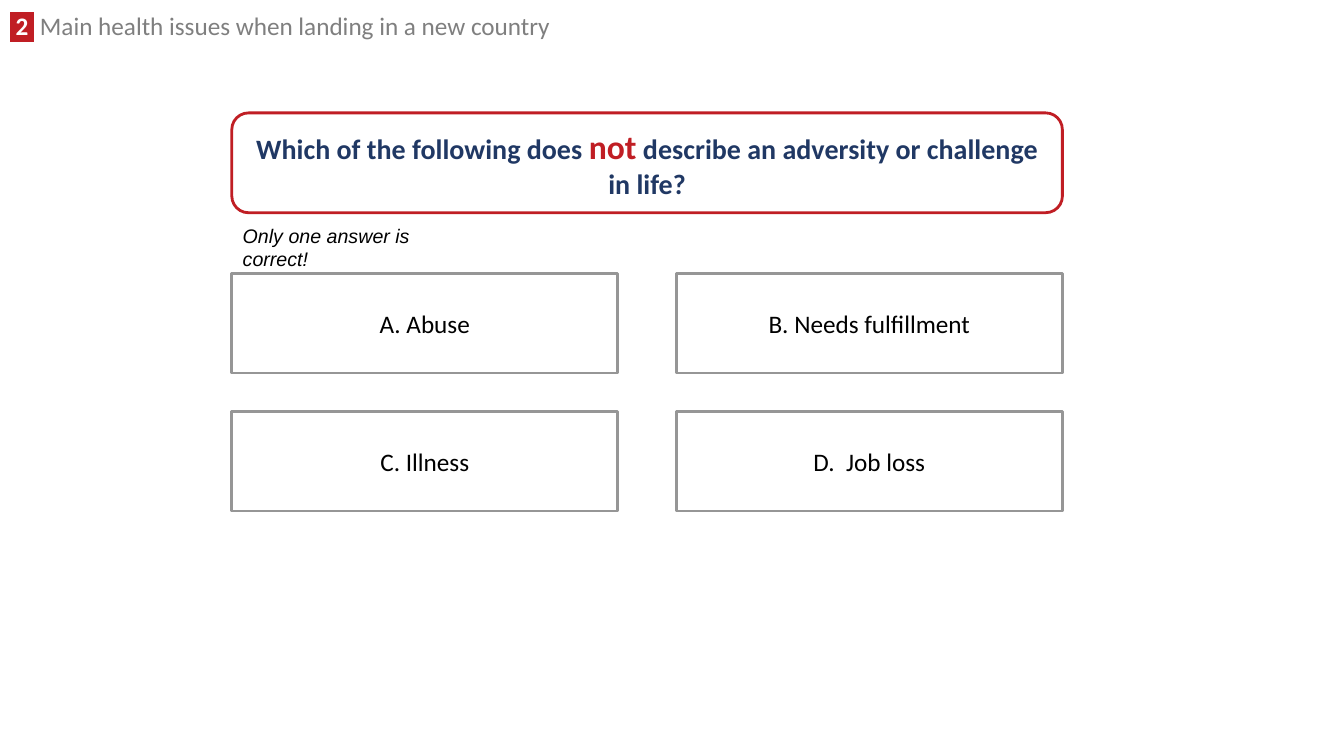
from dataclasses import dataclass

from lxml import etree
from pptx import Presentation
from pptx.dml.color import RGBColor
from pptx.enum import shapes, text
from pptx.oxml import ns
from pptx.util import Pt


@dataclass(frozen=True)
class Theme:
    red: str = "C01E24"
    navy: str = "203864"
    grey: str = "7F7F7F"
    border: str = "969696"
    black: str = "000000"
    white: str = "FFFFFF"
    body_font: str = "Calibri"
    note_font: str = "Arial"
    note_size: int = 14
    text_size: int = 18
    question_size: int = 20
    emphasis_size: int = 24
    line_width: int = 2


@dataclass(frozen=True)
class Box:
    left: float
    top: float
    width: float
    height: float

    def lengths(self) -> tuple:
        return tuple(Pt(v) for v in (self.left, self.top, self.width, self.height))


@dataclass(frozen=True)
class Span:
    text: str
    size: int
    color: str
    bold: bool = False
    italic: bool = False
    font: str = Theme.body_font
    highlight: str = ""


@dataclass(frozen=True)
class Card:
    box: Box
    shape: int
    border: str
    spans: tuple


THEME = Theme()
HEADER = Box(0, 7.92, 411.12, 25.2)
QUESTION = Box(165.6, 80.64, 593.28, 71.28)
NOTE = Box(166.32, 156.24, 169.92, 24.48)
ANSWER = Box(165.6, 195.12, 275.76, 71.28)
COLUMN_STEP, ROW_STEP = 317.52, 98.64
ANSWERS = ("A. Abuse", "B. Needs fulfillment", "C. Illness", "D.  Job loss")


def add_highlight(r, color: str) -> None:
    """Put a marker colour behind a run, directly after its fill."""
    mark = etree.Element(ns.qn("a:highlight"))
    etree.SubElement(mark, ns.qn("a:srgbClr"), val=color)
    r.font.fill
    r._r.get_or_add_rPr().find(ns.qn("a:solidFill")).addnext(mark)


def write_text(tf, spans: tuple, align, anchor, spacing: float = 1.0) -> None:
    frame_format = {"word_wrap": True, "auto_size": text.MSO_AUTO_SIZE.NONE,
                    "vertical_anchor": anchor,
                    "margin_left": Pt(7.2), "margin_right": Pt(7.2),
                    "margin_top": Pt(3.6), "margin_bottom": Pt(3.6)}
    for name, value in frame_format.items():
        setattr(tf, name, value)
    p = tf.paragraphs[0]
    for name, value in {"alignment": align, "line_spacing": spacing,
                        "space_before": Pt(0)}.items():
        setattr(p, name, value)
    for span in spans:
        r = p.add_run()
        r.text = span.text
        for name, value in {"name": span.font, "size": Pt(span.size),
                            "bold": span.bold, "italic": span.italic}.items():
            setattr(r.font, name, value)
        r.font.color.rgb = RGBColor.from_string(span.color)
        if span.highlight:
            add_highlight(r, span.highlight)


def add_header(slide) -> None:
    title = slide.shapes.title
    for name, value in zip(("left", "top", "width", "height"), HEADER.lengths()):
        setattr(title, name, value)
    spans = (Span(" 2 ", THEME.text_size, THEME.white, bold=True, highlight=THEME.red),
             Span(" Main health issues when landing in a new country",
                  THEME.text_size, THEME.grey))
    write_text(title.text_frame, spans, text.PP_ALIGN.LEFT, text.MSO_ANCHOR.TOP, 0.8)


def add_card(slide, card: Card) -> None:
    sp = slide.shapes.add_shape(card.shape, *card.box.lengths())
    sp.shadow.inherit = False
    sp.fill.solid()
    sp.fill.fore_color.rgb = RGBColor.from_string(THEME.white)
    sp.line.color.rgb = RGBColor.from_string(card.border)
    sp.line.width = Pt(THEME.line_width)
    write_text(sp.text_frame, card.spans, text.PP_ALIGN.CENTER, text.MSO_ANCHOR.MIDDLE)


def add_note(slide) -> None:
    sp = slide.shapes.add_textbox(*NOTE.lengths())
    span = Span("Only one answer is correct!", THEME.note_size, THEME.black,
                italic=True, font=THEME.note_font)
    write_text(sp.text_frame, (span,), text.PP_ALIGN.LEFT, text.MSO_ANCHOR.TOP)


def question_card() -> Card:
    spans = (Span("Which of the following does ", THEME.question_size, THEME.navy, bold=True),
             Span("not", THEME.emphasis_size, THEME.red, bold=True),
             Span(" describe an adversity or challenge in life?",
                  THEME.question_size, THEME.navy, bold=True))
    return Card(QUESTION, shapes.MSO_SHAPE.ROUNDED_RECTANGLE, THEME.red, spans)


def answer_card(index: int, answer: str) -> Card:
    row, column = divmod(index, 2)
    box = Box(ANSWER.left + column * COLUMN_STEP, ANSWER.top + row * ROW_STEP,
              ANSWER.width, ANSWER.height)
    return Card(box, shapes.MSO_SHAPE.RECTANGLE, THEME.border,
                (Span(answer, THEME.text_size, THEME.black),))


def main() -> None:
    prs = Presentation()
    prs.slide_width, prs.slide_height = Pt(960), Pt(540)
    slide = prs.slides.add_slide(prs.slide_layouts[5])
    add_header(slide)
    add_card(slide, question_card())
    for index, answer in enumerate(ANSWERS):
        add_card(slide, answer_card(index, answer))
    add_note(slide)
    prs.save("out.pptx")


if __name__ == "__main__":
    main()
